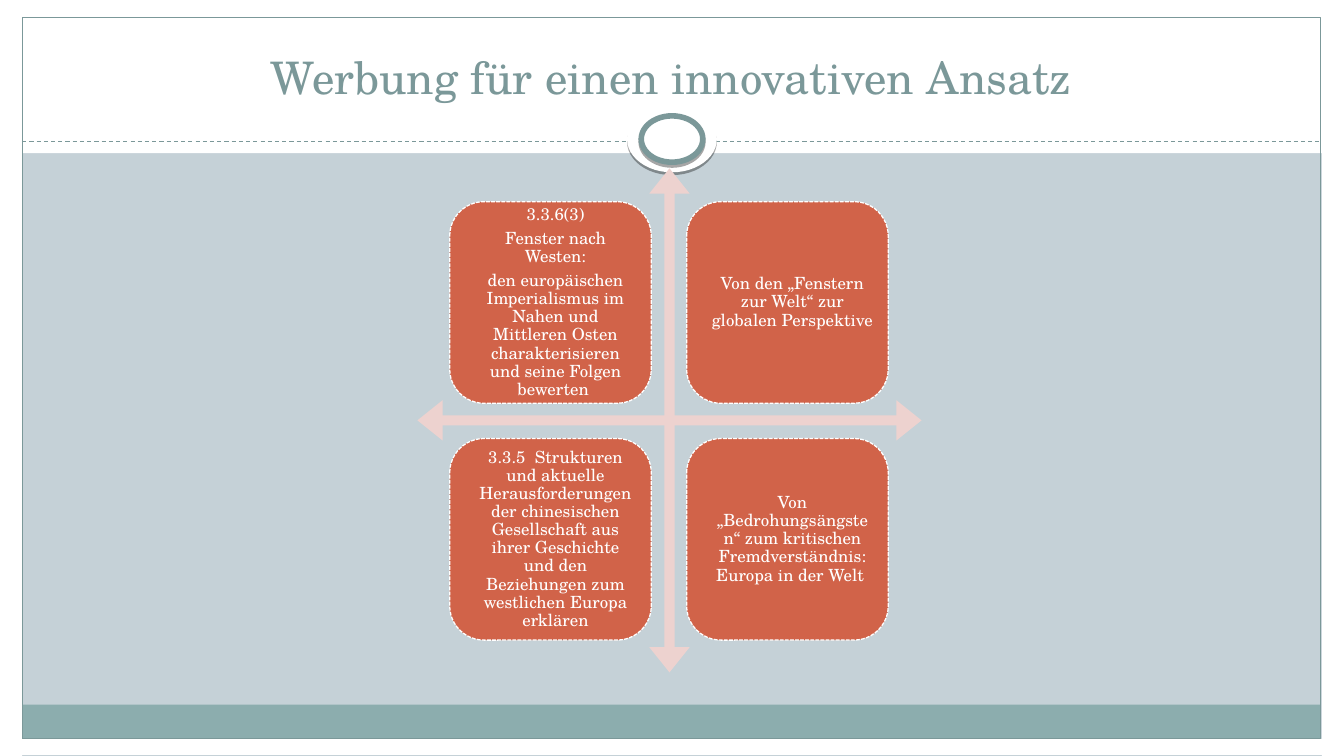
from lxml import etree
from pptx import Presentation
from pptx import util as u
from pptx.dml.color import RGBColor
from pptx.enum import dml, shapes, text
from pptx.oxml.ns import qn

WIDTH, HEIGHT = u.Inches(13.33), u.Inches(7.5)
FONT = "TeX Gyre Schola"
COLOURS = {"ground": "C5D1D7", "paper": "FFFFFF", "band": "8CADAE", "rule": "7B9899",
           "arrow": "EDD2CF", "card": "D16349", "shade": "000000"}
BORDERS = [(0, 97.73, 100, 2.13), (0, 0, 100, 20.27), (0, 0, 1.65, 100), (98.35, 0, 1.65, 100)]
CARDS = [
    [["3.3.6(3)", "Fenster nach Westen:",
      "den europäischen Imperialismus im Nahen und Mittleren Osten "
      "charakterisieren und seine Folgen bewerten "],
     ["Von den „Fenstern zur Welt“ zur globalen Perspektive"]],
    [["3.3.5  Strukturen und aktuelle Herausforderungen der chinesischen Gesellschaft "
      "aus ihrer Geschichte und den Beziehungen zum westlichen Europa erklären"],
     ["Von „Bedrohungsängsten“ zum kritischen Fremdverständnis: Europa in der Welt "]],
]
CARD_LEFT, CARD_TOP, CARD_WIDTH, CARD_HEIGHT = 33.46, 26.67, 15, 26.67
COLUMN_STEP, ROW_STEP = 17.63, 31.33
CARD_MARGINS = {"margin_left": u.Inches(0.15), "margin_right": u.Inches(0.05),
                "margin_top": u.Inches(0.15), "margin_bottom": u.Inches(0.15)}
CARD_PARA = {"line_spacing": 0.9, "space_after": u.Pt(4.2)}


def across(percent):
    """Turn a percentage of the slide's width into a length."""
    return round(WIDTH * percent / 100)


def down(percent):
    """Turn a percentage of the slide's height into a length."""
    return round(HEIGHT * percent / 100)


def place(left, top, width, height):
    """Turn a rectangle in percentages into lengths."""
    return across(left), down(top), across(width), down(height)


def colour(name):
    """Look up a named colour."""
    return RGBColor.from_string(COLOURS[name])


def style_line(line, name, points, dash=None):
    """Set the colour, width and dash of a line."""
    line.color.rgb = colour(name)
    line.width = u.Pt(points)
    if dash:
        line.dash_style = dash


def add_figure(page, kind, area, fill=None, line=None, adjust=()):
    """Add a preset shape with a flat fill and an optional line."""
    figure = page.shapes.add_shape(kind, *place(*area))
    figure.shadow.inherit = False
    if fill:
        figure.fill.solid()
        figure.fill.fore_color.rgb = colour(fill)
    else:
        figure.fill.background()
    if line:
        style_line(figure.line, *line)
    else:
        figure.line.fill.background()
    for index, value in enumerate(adjust):
        figure.adjustments[index] = value
    return figure


def add_shade(figure):
    """Drop a soft-toned shadow straight below a shape."""
    effects = figure._element.spPr.find(qn("a:effectLst"))
    shadow = etree.SubElement(effects, qn("a:outerShdw"), blurRad="0",
                              dist=str(u.Pt(2)), dir="5400000", rotWithShape="0")
    tone = etree.SubElement(shadow, qn("a:srgbClr"), val=COLOURS["shade"])
    etree.SubElement(tone, qn("a:alpha"), val="35000")


def write(box, lines, size, tint, frame_format, para_format):
    """Fill a box with centred paragraphs."""
    frame = box.text_frame
    frame.word_wrap = True
    for key, value in frame_format.items():
        setattr(frame, key, value)
    for index, line in enumerate(lines):
        para = frame.add_paragraph() if index else frame.paragraphs[0]
        for key, value in {"alignment": text.PP_ALIGN.CENTER, **para_format}.items():
            setattr(para, key, value)
        span = para.add_run()
        span.text = line
        for key, value in {"name": FONT, "size": u.Pt(size)}.items():
            setattr(span.font, key, value)
        span.font.color.rgb = colour(tint)


def add_frame(page):
    """Draw the borders, the footer band, the rule and the ring."""
    kinds = shapes.MSO_SHAPE
    for area in BORDERS:
        add_figure(page, kinds.RECTANGLE, area, "paper")
    add_figure(page, kinds.RECTANGLE, (1.65, 93.2, 96.62, 4.53), "band")
    add_figure(page, kinds.RECTANGLE, (1.65, 2.27, 96.62, 95.47), line=("rule", 0.75))
    rule = page.shapes.add_connector(shapes.MSO_CONNECTOR.STRAIGHT, across(1.65),
                                     down(18.67), across(98.27), down(18.67))
    style_line(rule.line, "rule", 0.75, dml.MSO_LINE.DASH)
    etree.SubElement(rule._element.spPr, qn("a:effectLst"))
    for area, line in [((46.66, 14, 6.68, 8.8), None),
                       ((47.71, 15.33, 4.58, 6.13), ("rule", 4))]:
        add_shade(add_figure(page, kinds.OVAL, area, "paper", line))


def add_title(page, title):
    """Add the slide's heading."""
    box = page.shapes.add_textbox(*place(3.3, 3.33, 93.32, 11.07))
    write(box, [title], 32, "rule", {"vertical_anchor": text.MSO_ANCHOR.BOTTOM}, {})


def add_matrix(page):
    """Draw the crossed arrows and the four cards around them."""
    add_figure(page, shapes.MSO_SHAPE.QUAD_ARROW, (31.06, 22.27, 37.51, 66.67),
               "arrow", adjust=(0.02, 0.04, 0.05))
    frame_format = {"vertical_anchor": text.MSO_ANCHOR.MIDDLE, **CARD_MARGINS}
    for row, cards in enumerate(CARDS):
        for column, lines in enumerate(cards):
            area = (CARD_LEFT + column * COLUMN_STEP, CARD_TOP + row * ROW_STEP,
                    CARD_WIDTH, CARD_HEIGHT)
            card = add_figure(page, shapes.MSO_SHAPE.ROUNDED_RECTANGLE, area, "card",
                              ("paper", 0.91, dml.MSO_LINE.SQUARE_DOT), (0.17,))
            write(card, lines, 12, "paper", frame_format, CARD_PARA)


def main():
    """Build the slide and save it."""
    deck = Presentation()
    deck.slide_width, deck.slide_height = WIDTH, HEIGHT
    page = deck.slides.add_slide(deck.slide_layouts[6])
    page.background.fill.solid()
    page.background.fill.fore_color.rgb = colour("ground")
    add_frame(page)
    add_title(page, "Werbung für einen innovativen Ansatz")
    add_matrix(page)
    deck.save("out.pptx")


if __name__ == "__main__":
    main()
